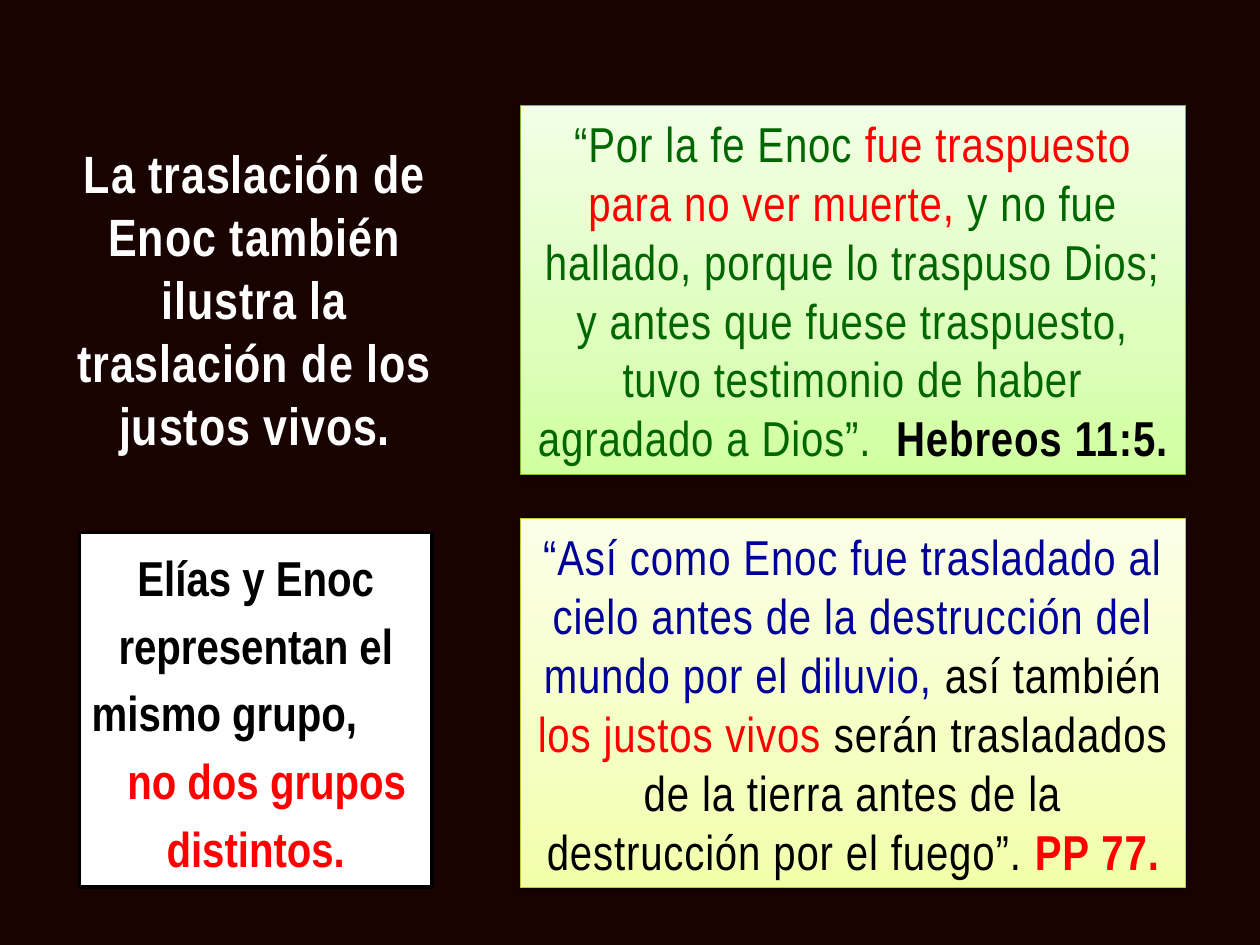
from copy import deepcopy
from dataclasses import dataclass

from lxml import etree
from pptx import Presentation
from pptx import util as u
from pptx.dml.color import RGBColor
from pptx.enum import shapes, text
from pptx.oxml.ns import qn


@dataclass(frozen=True)
class Theme:
    font: str = "Arial Narrow"
    title_size: int = 30
    body_size: int = 28
    background: str = "190301"
    white: str = "FFFFFF"
    black: str = "000000"
    red: str = "FF0000"
    green: str = "006600"
    blue: str = "000099"
    lime_fill: tuple = ("D0FF9F", "DDFEBC", "F2FFE5")
    lime_line: str = "88B72F"
    yellow_fill: tuple = ("F2FFA9", "F5FFC2", "FBFFE8")
    yellow_line: str = "BFCE35"


def apply(target, values):
    for name, value in values.items():
        setattr(target, name, value)


def rgb(color):
    return RGBColor.from_string(color)


def add_shadow(effects, blur, distance, direction, opacity):
    shadow = etree.SubElement(
        effects, qn("a:outerShdw"), blurRad=str(u.Pt(blur)), dist=str(u.Pt(distance)),
        dir=str(direction * 60000), algn="ctr", rotWithShape="0")
    color = etree.SubElement(shadow, qn("a:srgbClr"), val="000000")
    etree.SubElement(color, qn("a:alpha"), val=str(opacity * 1000))


class SlideBuilder:
    def __init__(self, slide, theme):
        self.slide = slide
        self.theme = theme
        fill = slide.background.fill
        fill.solid()
        fill.fore_color.rgb = rgb(theme.background)

    def add_text(self, box, paragraphs, size, spacing=0, anchor=text.MSO_ANCHOR.TOP,
                 shadow=False):
        frame = box.text_frame
        apply(frame, {"word_wrap": True, "vertical_anchor": anchor,
                      "auto_size": text.MSO_AUTO_SIZE.SHAPE_TO_FIT_TEXT})
        for index, (layout, spans) in enumerate(paragraphs):
            para = frame.add_paragraph() if index else frame.paragraphs[0]
            indent = layout.get("indent", 0)
            apply(para, {"alignment": text.PP_ALIGN.CENTER} |
                  {k: v for k, v in layout.items() if k != "indent"})
            if indent:
                para._p.get_or_add_pPr().set("indent", str(indent))
            for words, color, bold in spans:
                span = para.add_run()
                span.text = words
                apply(span.font, {"size": u.Pt(size), "bold": bold, "name": self.theme.font})
                span.font.color.rgb = rgb(color)
                properties = span._r.get_or_add_rPr()
                if spacing:
                    properties.set("spc", str(int(spacing * 100)))
                if shadow:
                    effects = etree.Element(qn("a:effectLst"))
                    add_shadow(effects, 4, 2, 45, 60)
                    properties.find(qn("a:latin")).addprevious(effects)

    def rectangle(self, place, line, width):
        box = self.slide.shapes.add_shape(
            shapes.MSO_SHAPE.RECTANGLE, *(u.Cm(value) for value in place))
        box.shadow.inherit = False
        box.line.color.rgb = rgb(line)
        box.line.width = u.Pt(width)
        return box

    def quote(self, place, colors, line, spans):
        box = self.rectangle(place, line, 0.75)
        fill = box.fill
        fill.gradient()
        fill.gradient_angle = 90
        first = box._element.spPr.find(".//" + qn("a:gs"))
        first.addnext(deepcopy(first))
        for stop, color, position in zip(fill.gradient_stops, colors, (0, 0.35, 1)):
            stop.color.rgb = rgb(color)
            stop.position = position
        add_shadow(box._element.spPr.find(qn("a:effectLst")), 3.1, 1.6, 90, 38)
        self.add_text(box, [({}, spans)], self.theme.body_size, 0.5, text.MSO_ANCHOR.MIDDLE)

    def note(self, place, paragraphs):
        box = self.rectangle(place, self.theme.black, 2)
        box.fill.solid()
        box.fill.fore_color.rgb = rgb(self.theme.white)
        self.add_text(box, paragraphs, self.theme.body_size)

    def title(self, place, words):
        box = self.slide.shapes.add_textbox(*(u.Cm(value) for value in place))
        self.add_text(box, [({}, [(words, self.theme.white, True)])],
                      self.theme.title_size, 0.5, shadow=True)


def main():
    theme = Theme()
    deck = Presentation()
    apply(deck, {"slide_width": u.Cm(25.4), "slide_height": u.Cm(19.05)})
    page = SlideBuilder(deck.slides.add_slide(deck.slide_layouts[6]), theme)

    quote_left, quote_width, quote_height = 10.49, 13.41, 7.44
    page.quote((quote_left, 10.46, quote_width, quote_height),
               theme.yellow_fill, theme.yellow_line, [
        ("“Así como Enoc fue trasladado al cielo antes de la destrucción del mundo "
         "por el diluvio, ", theme.blue, False),
        ("así también ", theme.black, False),
        ("los justos vivos ", theme.red, False),
        ("serán trasladados de la tierra antes de la destrucción por el fuego”. ",
         theme.black, False),
        ("PP 77.", theme.red, True),
    ])
    spaced = {"line_spacing": 1.15}
    page.note((1.6, 10.74, 7.11, 7.14), [
        (spaced, [("Elías y Enoc representan el", theme.black, True)]),
        (spaced | {"alignment": text.PP_ALIGN.LEFT}, [("mismo grupo,", theme.black, True)]),
        (spaced | {"indent": u.Cm(0.44), "space_after": u.Pt(10)},
         [("no dos grupos distintos.", theme.red, True)]),
    ])
    page.quote((quote_left, 2.13, quote_width, quote_height),
               theme.lime_fill, theme.lime_line, [
        ("“Por la fe Enoc ", theme.green, False),
        ("fue traspuesto para no ver muerte,", theme.red, False),
        (" y no fue hallado, porque lo traspuso Dios; y antes que fuese traspuesto, "
         "tuvo testimonio de haber agradado a Dios”.  ", theme.green, False),
        ("Hebreos 11:5.", theme.black, True),
    ])
    page.title((1.24, 2.72, 7.8, 6.68),
               "La traslación de Enoc también ilustra la traslación de los justos vivos.")
    deck.save("out.pptx")


if __name__ == "__main__":
    main()
